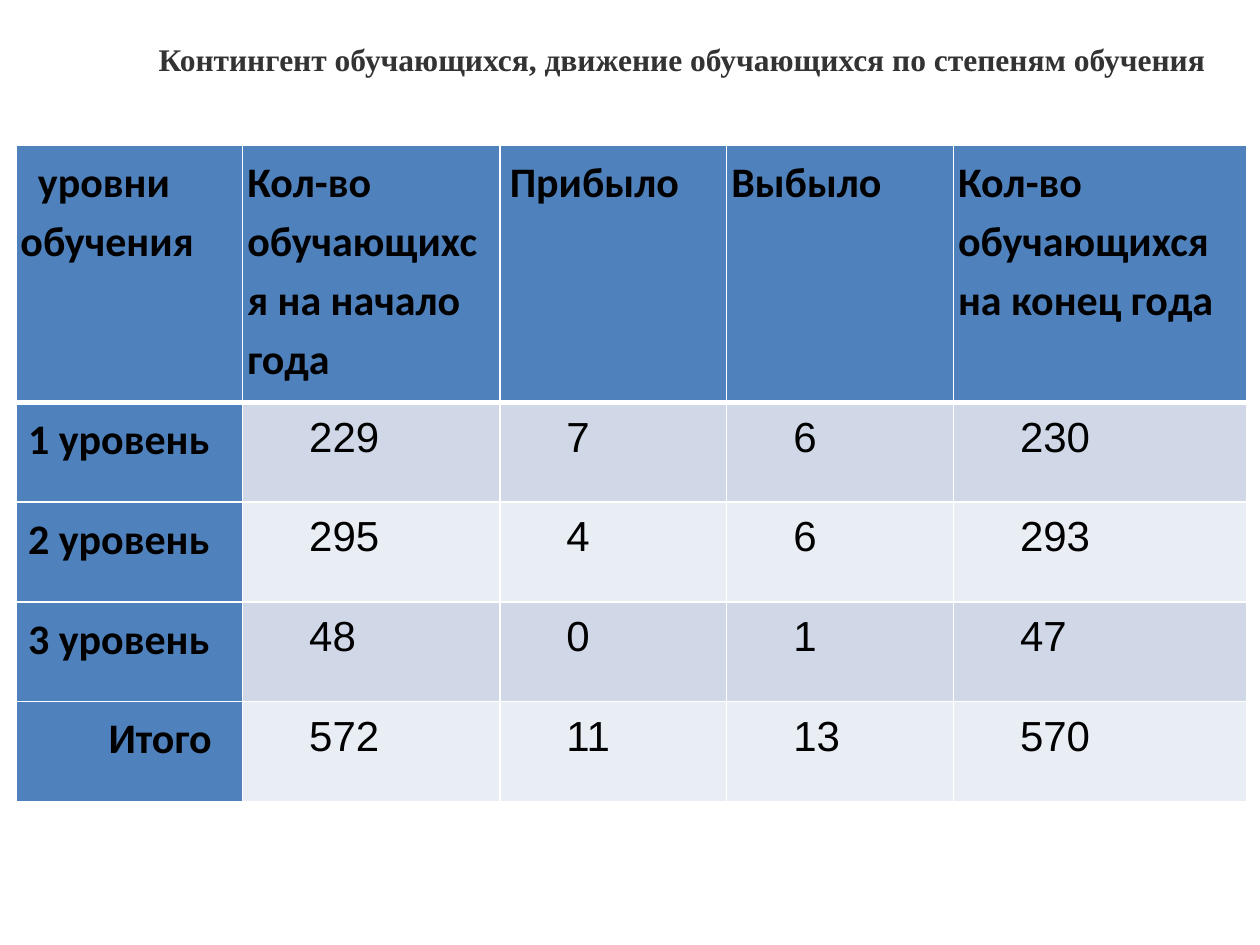
from lxml import etree
from pptx import Presentation
from pptx.dml.color import RGBColor
from pptx.enum import text
from pptx.oxml import ns
from pptx.util import Pt

BLACK = RGBColor(0x00, 0x00, 0x00)
TITLE_GREY = RGBColor(0x33, 0x33, 0x33)
BLUE = RGBColor(0x4F, 0x81, 0xBD)
BAND_DARK = RGBColor(0xD0, 0xD8, 0xE8)
BAND_LIGHT = RGBColor(0xE9, 0xED, 0xF4)
WHITE = RGBColor(0xFF, 0xFF, 0xFF)

DEEP_INDENT = 35.4
COLUMN_WIDTHS = [129.6, 147, 129.6, 129.6, 167.6]
ROW_HEIGHTS = [147] + [57] * 4
ROWS = [
    ["уровни\nобучения", "Кол-во обучающихся на начало года", "Прибыло",
     "Выбыло", "Кол-во обучающихся на конец года"],
    ["1 уровень", "229", "7", "6", "230"],
    ["2 уровень", "295", "4", "6", "293"],
    ["3 уровень", "48", "0", "1", "47"],
    ["Итого", "572", "11", "13", "570"],
]
HEADER_INDENTS = [10, 0, 3, 0, 0]


def write(para, words, font, size, color, bold, indent):
    """Fill a paragraph with one formatted run and a first-line indent."""
    properties = para._p.get_or_add_pPr()
    properties.set("marL", "0")
    properties.set("indent", str(int(Pt(indent))))
    span = para.add_run()
    span.text = words
    span.font.name = font
    span.font.size = Pt(size)
    span.font.bold = bold
    span.font.color.rgb = color


def add_border(cell, side, width):
    """Draw one white edge of a table cell."""
    line = etree.SubElement(cell._tc.get_or_add_tcPr(), ns.qn("a:ln" + side),
                            w=str(int(Pt(width))))
    fill = etree.SubElement(line, ns.qn("a:solidFill"))
    etree.SubElement(fill, ns.qn("a:srgbClr"), val=str(WHITE))


deck = Presentation()
deck.slide_width, deck.slide_height = Pt(720), Pt(540)
page = deck.slides.add_slide(deck.slide_layouts[5])

# Title
title = page.shapes.title
title.left, title.top, title.width, title.height = Pt(48), Pt(19), Pt(655), Pt(51)
frame = title.text_frame
frame.auto_size = text.MSO_AUTO_SIZE.NONE
frame.vertical_anchor = text.MSO_ANCHOR.TOP
frame.word_wrap = True
heading = frame.paragraphs[0]
heading.alignment = text.PP_ALIGN.LEFT
write(heading, "Контингент обучающихся, движение обучающихся по степеням обучения",
      "Times New Roman", 18, TITLE_GREY, True, DEEP_INDENT)

# Table grid
table = page.shapes.add_table(len(ROWS), len(COLUMN_WIDTHS), Pt(9), Pt(83),
                              Pt(sum(COLUMN_WIDTHS)), Pt(sum(ROW_HEIGHTS))).table
table.first_col = True
for column, width in zip(table.columns, COLUMN_WIDTHS):
    column.width = Pt(width)
for row, height in zip(table.rows, ROW_HEIGHTS):
    row.height = Pt(height)

# Table cells
for r, values in enumerate(ROWS):
    for c, value in enumerate(values):
        cell = table.cell(r, c)
        cell.margin_left = cell.margin_right = Pt(2.7)
        cell.margin_top = cell.margin_bottom = Pt(2.7)

        # Thick line between the header and the body
        for side in "LRTB":
            thick = (r, side) in [(0, "B"), (1, "T")]
            add_border(cell, side, 3 if thick else 1)

        label = r == 0 or c == 0
        cell.fill.solid()
        cell.fill.fore_color.rgb = BLUE if label else (BAND_DARK if r % 2 else BAND_LIGHT)

        if r == 0:
            indent = HEADER_INDENTS[c]
        elif c == 0 and r < len(ROWS) - 1:
            indent = 4.3
        else:
            indent = DEEP_INDENT
        for i, words in enumerate(value.split("\n")):
            para = cell.text_frame.add_paragraph() if i else cell.text_frame.paragraphs[0]
            para.line_spacing = 1.15
            if value == "Итого":
                para.alignment = text.PP_ALIGN.CENTER
            write(para, words, "Calibri" if label else "Arial", 24, BLACK, label,
                  0 if i else indent)

deck.save("out.pptx")
